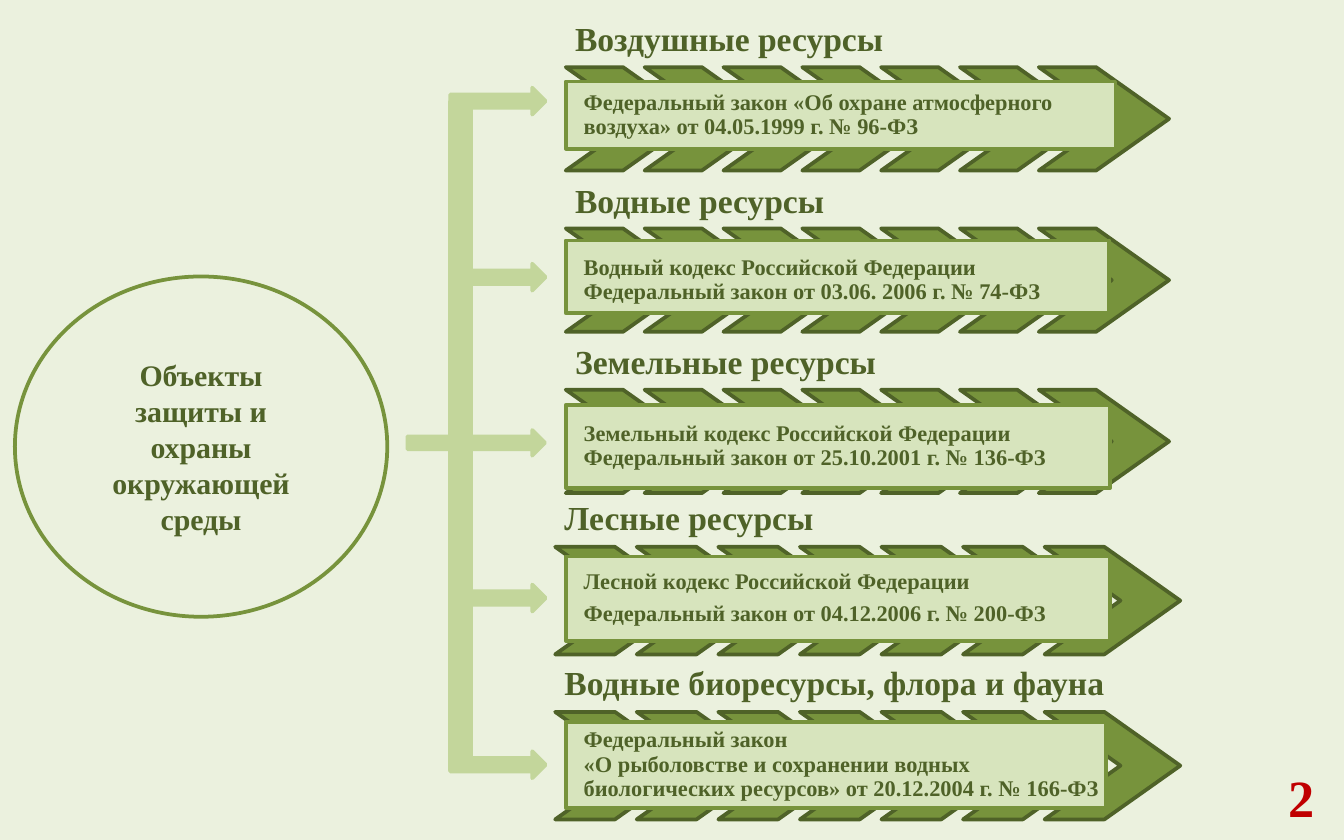
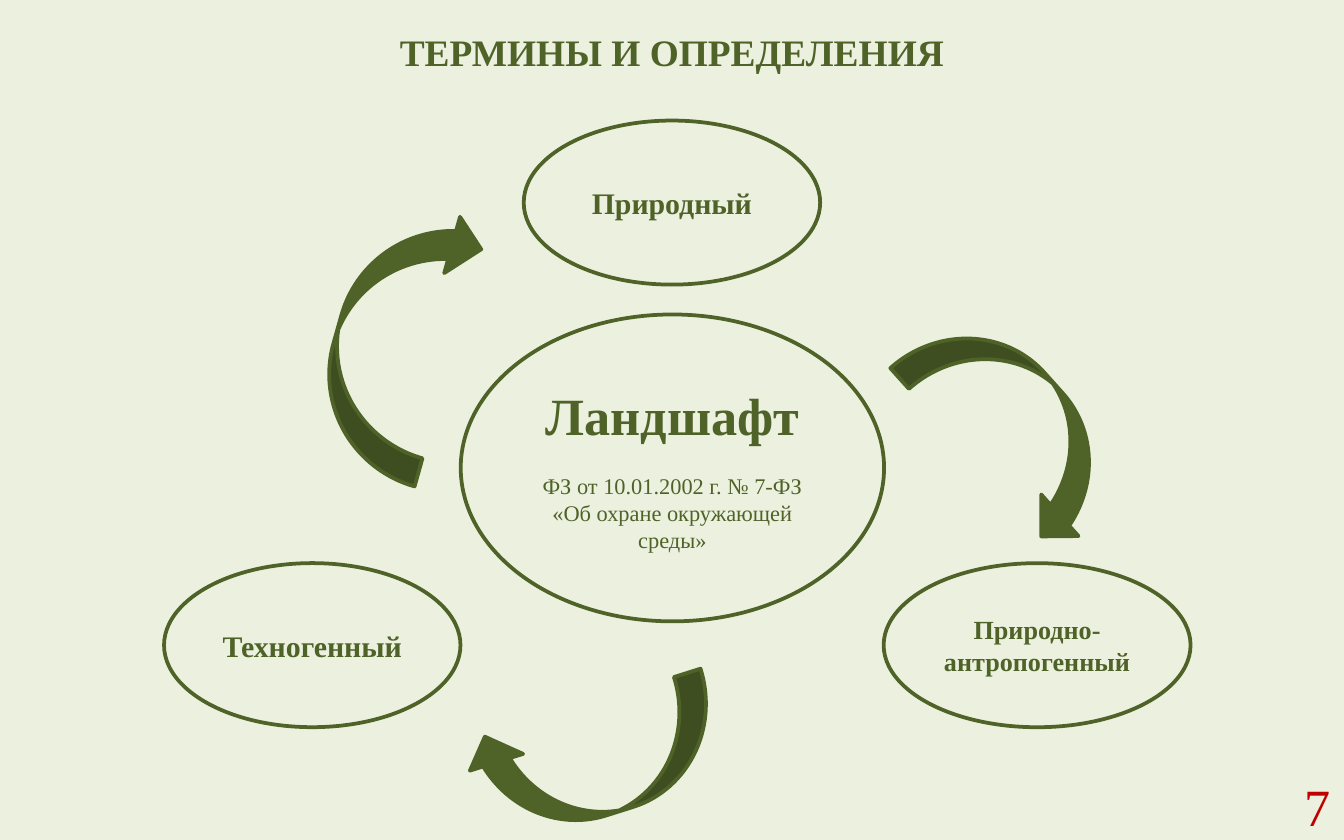
from typing import NamedTuple

from pptx import Presentation
from pptx.dml.color import RGBColor
from pptx.enum.shapes import MSO_SHAPE
from pptx.enum.text import MSO_ANCHOR, PP_ALIGN
from pptx.shapes.autoshape import Shape
from pptx.slide import Slide
from pptx.util import Pt

CHEVRON = MSO_SHAPE.CHEVRON
ELLIPSE = MSO_SHAPE.OVAL
RECTANGLE = MSO_SHAPE.RECTANGLE
RIGHT_ARROW = MSO_SHAPE.RIGHT_ARROW
CURVED_ARROW = MSO_SHAPE.CURVED_DOWN_ARROW
TOP, MIDDLE, BOTTOM = MSO_ANCHOR.TOP, MSO_ANCHOR.MIDDLE, MSO_ANCHOR.BOTTOM
LEFT, CENTER, RIGHT = PP_ALIGN.LEFT, PP_ALIGN.CENTER, PP_ALIGN.RIGHT

FONT = "Times New Roman"
COLORS = {
    "background": "EBF1DE",
    "dark": "4F6228",
    "medium": "77933C",
    "light": "C3D69B",
    "pale": "D7E4BD",
    "number": "C00000",
}
CHEVRON_COUNT = 7
CHEVRON_POINT = 0.706
LINE_SPACING = 0.9


class Box(NamedTuple):
    left: float
    top: float
    width: float
    height: float


class Margins(NamedTuple):
    left: float = 7.2
    top: float = 3.6
    right: float = 7.2
    bottom: float = 3.6


class TextStyle(NamedTuple):
    size: float
    color: str = "dark"
    bold: bool = True
    align: PP_ALIGN = CENTER
    anchor: MSO_ANCHOR = MIDDLE
    line_spacing: float = 1.0
    space_after: float = 0


class ChevronBand(NamedTuple):
    title: Box
    first: Box
    step: float


class Resource(NamedTuple):
    title: str
    band: ChevronBand
    law_box: Box
    laws: list[str]
    space_after: float = 0
    text_drop: float = 0


class Bubble(NamedTuple):
    text: str
    box: Box
    size: float
    outline: str = "dark"


class CurvedArrow(NamedTuple):
    box: Box
    rotation: float


def upper_band(index: int) -> ChevronBand:
    top = 36 + 86.4 * index
    return ChevronBand(Box(303.1, top - 26.8, 299.5, 27.4),
                       Box(303.1, top, 69.8, 55.4), 42.24)


def lower_band(index: int) -> ChevronBand:
    top = 293 + 88.4 * index
    return ChevronBand(Box(297.4, top - 28.3, 310.3, 28.4),
                       Box(297.4, top, 72.7, 57.6), 43.7)


RESOURCES = [
    Resource("Воздушные ресурсы", upper_band(0), Box(303.1, 43.7, 294.5, 36),
             ["Федеральный закон «Об охране атмосферного воздуха» от 04.05.1999 г. № 96-ФЗ"]),
    Resource("Водные ресурсы", upper_band(1), Box(303.1, 128.8, 291, 39),
             ["Водный кодекс Российской Федерации",
              "Федеральный закон от 03.06. 2006 г. № 74-ФЗ"], text_drop=3.4),
    Resource("Земельные ресурсы", upper_band(2), Box(303.1, 216.8, 291.6, 44.6),
             ["Земельный кодекс Российской Федерации",
              "Федеральный закон от 25.10.2001 г. № 136-ФЗ"]),
    Resource("Лесные ресурсы", lower_band(0), Box(303.1, 298.1, 291.6, 45.2),
             ["Лесной кодекс Российской Федерации",
              "Федеральный закон от 04.12.2006 г. № 200-ФЗ"], space_after=4.2),
    Resource("Водные биоресурсы, флора и фауна", lower_band(1),
             Box(303.1, 386.7, 289.6, 46.1),
             ["Федеральный закон",
              "«О рыболовстве и сохранении водных биологических ресурсов» от 20.12.2004 г. № 166-ФЗ"]),
]

PROTECTED_OBJECTS = Bubble("Объекты защиты и охраны окружающей среды",
                           Box(8, 148.1, 199.5, 182.3), 16, "medium")
TRUNK = Box(241.2, 54.7, 11.5, 357.8)
BRANCHES = [
    Box(241.2, 47, 51.1, 14.4),
    Box(241.2, 141.3, 51.1, 14.4),
    Box(218.3, 230.4, 73.7, 13.7),
    Box(241.2, 313.2, 51.1, 14.4),
    Box(241.2, 402.5, 51.1, 14.4),
]

LANDSCAPE = Bubble("Ландшафт", Box(246.8, 168.5, 226.8, 164.4), 28)
LANDSCAPE_LAW = "ФЗ от 10.01.2002 г. № 7-ФЗ «Об охране окружающей среды»"
LANDSCAPE_KINDS = [
    Bubble("Техногенный", Box(87.9, 301.7, 158.8, 87.9), 16),
    Bubble("Природно-антропогенный", Box(473.4, 301.7, 164.4, 87.9), 14),
    Bubble("Природный", Box(280.6, 64.6, 158.8, 87.9), 16),
]
CURVED_ARROWS = [
    CurvedArrow(Box(138.2, 149.8, 147.6, 62.6), 285.7),
    CurvedArrow(Box(251.3, 377.3, 136.1, 59.8), 162.5),
    CurvedArrow(Box(476.6, 198, 136.1, 59.8), 48.1),
]


def color(name: str) -> RGBColor:
    return RGBColor.from_string(COLORS[name])


def points(box: Box) -> list[Pt]:
    return [Pt(length) for length in box]


def write_text(shape: Shape, text: str, style: TextStyle,
               margins: Margins = Margins()) -> None:
    frame = shape.text_frame
    frame.text = text
    frame.word_wrap = True
    frame.vertical_anchor = style.anchor
    frame.margin_left, frame.margin_top, frame.margin_right, frame.margin_bottom = (
        Pt(margin) for margin in margins)
    for paragraph in frame.paragraphs:
        paragraph.alignment = style.align
        paragraph.line_spacing = style.line_spacing
        paragraph.space_after = Pt(style.space_after)
        for run in paragraph.runs:
            run.font.name = FONT
            run.font.size = Pt(style.size)
            run.font.bold = style.bold
            run.font.color.rgb = color(style.color)


def add_text(slide: Slide, box: Box, text: str, style: TextStyle,
             margins: Margins = Margins()) -> None:
    write_text(slide.shapes.add_textbox(*points(box)), text, style, margins)


def add_figure(slide: Slide, kind: MSO_SHAPE, box: Box, fill: str, outline: str) -> Shape:
    shape = slide.shapes.add_shape(kind, *points(box))
    shape.shadow.inherit = False
    shape.fill.solid()
    shape.fill.fore_color.rgb = color(fill)
    shape.line.color.rgb = color(outline)
    shape.line.width = Pt(2)
    return shape


def add_bubble(slide: Slide, bubble: Bubble) -> Shape:
    shape = add_figure(slide, ELLIPSE, bubble.box, "background", bubble.outline)
    write_text(shape, bubble.text, TextStyle(bubble.size))
    return shape


def add_resource(slide: Slide, resource: Resource) -> None:
    band = resource.band
    add_text(slide, band.title, resource.title,
             TextStyle(18, align=LEFT, anchor=BOTTOM, line_spacing=LINE_SPACING),
             Margins(5, 5, 5, 5))
    for index in range(CHEVRON_COUNT):
        box = band.first._replace(left=band.first.left + index * band.step)
        chevron = add_figure(slide, CHEVRON, box, "medium", "dark")
        chevron.adjustments[0] = CHEVRON_POINT
    law_box = add_figure(slide, RECTANGLE, resource.law_box, "pale", "medium")
    write_text(law_box, "\n".join(resource.laws),
               TextStyle(12, align=LEFT, line_spacing=LINE_SPACING,
                         space_after=resource.space_after),
               Margins(9.6, 2.4 + resource.text_drop, 2.2, 2.4))


def add_slide(presentation: Presentation, number: str, number_box: Box, bold: bool) -> Slide:
    slide = presentation.slides.add_slide(presentation.slide_layouts[6])
    slide.background.fill.solid()
    slide.background.fill.fore_color.rgb = color("background")
    add_text(slide, number_box, number, TextStyle(28, "number", bold, RIGHT))
    return slide


def build_resources_slide(presentation: Presentation) -> None:
    slide = add_slide(presentation, "2", Box(683.3, 412.6, 28.1, 28.8), True)
    for resource in RESOURCES:
        add_resource(slide, resource)
    add_bubble(slide, PROTECTED_OBJECTS)
    add_figure(slide, RECTANGLE, TRUNK, "light", "light")
    for branch in BRANCHES:
        add_figure(slide, RIGHT_ARROW, branch, "light", "light")


def build_terms_slide(presentation: Presentation) -> None:
    slide = add_slide(presentation, "7", Box(688.3, 417.6, 31.7, 28.1), False)
    landscape = add_bubble(slide, LANDSCAPE)
    law = landscape.text_frame.add_paragraph()
    law.text = LANDSCAPE_LAW
    law.alignment = CENTER
    law.space_before = Pt(14)
    font = law.runs[0].font
    font.name, font.size, font.bold = FONT, Pt(12), False
    font.color.rgb = color("dark")
    for bubble in LANDSCAPE_KINDS:
        add_bubble(slide, bubble)
    for arrow in CURVED_ARROWS:
        shape = add_figure(slide, CURVED_ARROW, arrow.box, "dark", "dark")
        shape.rotation = arrow.rotation
    add_text(slide, Box(133.2, 12.2, 453.6, 31.7), "ТЕРМИНЫ И ОПРЕДЕЛЕНИЯ",
             TextStyle(20, anchor=TOP))


def main() -> None:
    presentation = Presentation()
    presentation.slide_width = Pt(720)
    presentation.slide_height = Pt(450)
    build_resources_slide(presentation)
    build_terms_slide(presentation)
    presentation.save("out.pptx")


if __name__ == "__main__":
    main()
